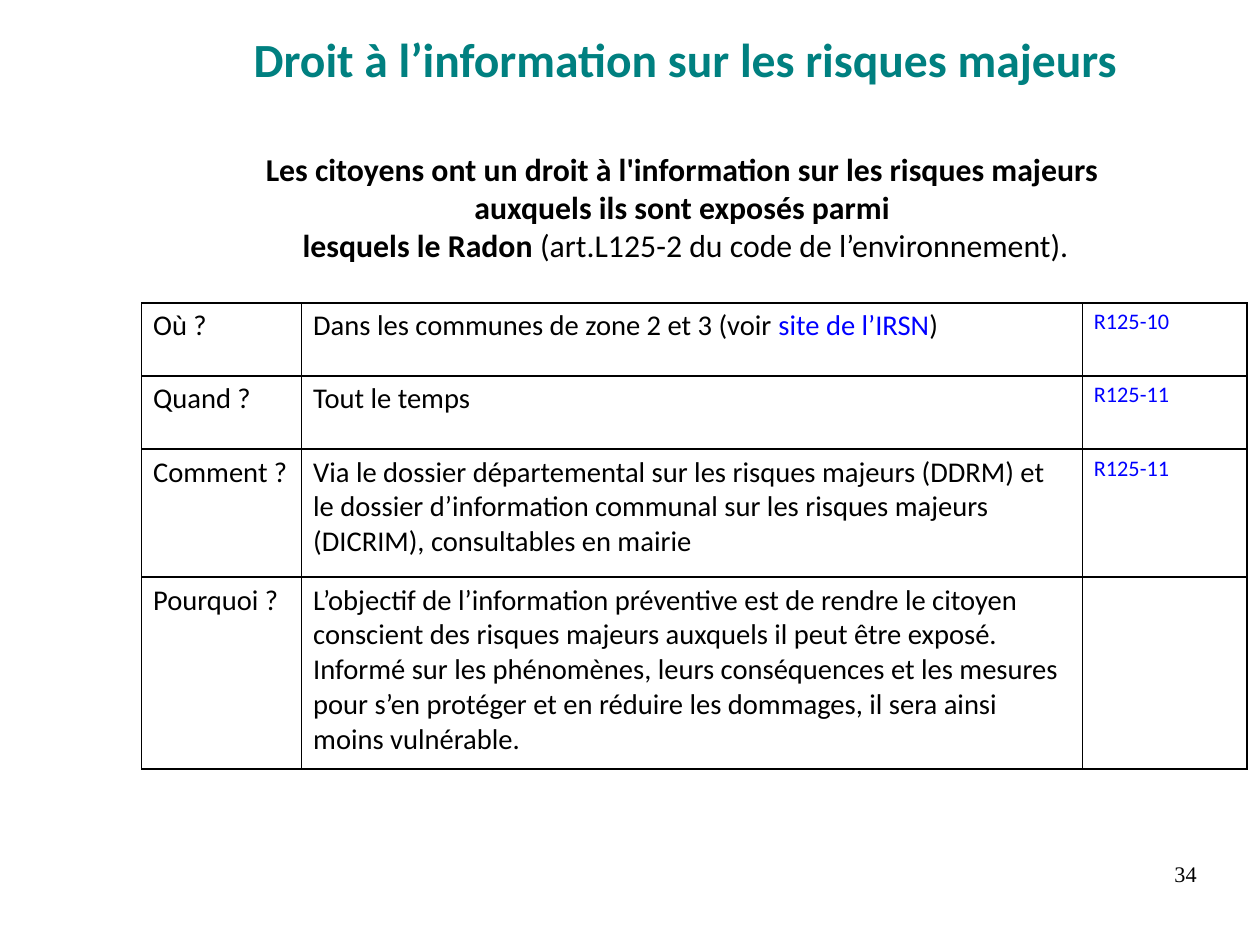
import pptx
import pptx.util
import pptx.dml.color
import pptx.enum.text
from lxml import etree
from pptx.oxml.ns import qn

Inches = pptx.util.Inches
Pt = pptx.util.Pt
RGBColor = pptx.dml.color.RGBColor
Align = pptx.enum.text.PP_ALIGN
Anchor = pptx.enum.text.MSO_ANCHOR

BLACK = RGBColor(0x00, 0x00, 0x00)
TEAL = RGBColor(0x00, 0x80, 0x80)
BLUE = RGBColor(0x00, 0x00, 0xFF)

# Content: a paragraph is a list of runs (text, size, colour, bold)
TITLE = [[("Droit à l’information sur les risques majeurs", 30, TEAL, True)]]
INTRO = [
    [("Les citoyens ont un droit à l'information sur les risques majeurs ", 20, BLACK, True)],
    [("auxquels ils sont exposés parmi ", 20, BLACK, True)],
    [("lesquels le Radon ", 20, BLACK, True),
     ("(art.L125-2 du code de l’environnement).", 20, BLACK, False)],
]
PAGE_NUMBER = [[("34", 14, BLACK, False)]]

# Question, answer as (text, colour) parts, article, row height
QUESTIONS = [
    ("Où ?",
     [("Dans les communes de zone 2 et 3 (voir ", BLACK), ("site de l’IRSN", BLUE), (")", BLACK)],
     "R125-10", 0.64),
    ("Quand ?", [("Tout le temps", BLACK)], "R125-11", 0.64),
    ("Comment ?",
     [("Via le dossier départemental sur les risques majeurs (DDRM) et le dossier "
       "d’information communal sur les risques majeurs (DICRIM), consultables en mairie", BLACK)],
     "R125-11", 1.12),
    ("Pourquoi ?",
     [("L’objectif de l’information préventive est de rendre le citoyen conscient des risques "
       "majeurs auxquels il peut être exposé. Informé sur les phénomènes, leurs conséquences et "
       "les mesures pour s’en protéger et en réduire les dommages, il sera ainsi moins "
       "vulnérable.", BLACK)],
     "", 1.68),
]
COLUMN_WIDTHS = [1.4, 6.83, 1.44]


def write(frame, paragraphs, align=Align.LEFT, font="Calibri"):
    for index, runs in enumerate(paragraphs):
        para = frame.paragraphs[0] if index == 0 else frame.add_paragraph()
        para.alignment = align
        for text, size, colour, bold in runs:
            span = para.add_run()
            span.text = text
            span.font.name = font
            span.font.size = Pt(size)
            span.font.bold = bold
            span.font.color.rgb = colour


def add_text(page, place, paragraphs, align, font="Calibri", margins=(0, 0),
             anchor=Anchor.TOP, wrap=True):
    box = page.shapes.add_textbox(*[Inches(length) for length in place])
    frame = box.text_frame
    frame.word_wrap = wrap
    frame.vertical_anchor = anchor
    frame.margin_left = frame.margin_right = Inches(margins[0])
    frame.margin_top = frame.margin_bottom = Inches(margins[1])
    write(frame, paragraphs, align, font)


def add_borders(cell):
    properties = cell._tc.get_or_add_tcPr()
    for position, side in enumerate(("lnL", "lnR", "lnT", "lnB")):
        line = etree.Element(qn("a:" + side), w=str(Pt(1)))
        fill = etree.SubElement(line, qn("a:solidFill"))
        etree.SubElement(fill, qn("a:srgbClr"), val=str(BLACK))
        properties.insert(position, line)


def add_question_table(page):
    heights = [row[-1] for row in QUESTIONS]
    table = page.shapes.add_table(
        len(heights), len(COLUMN_WIDTHS), Inches(1.24), Inches(2.65),
        Inches(sum(COLUMN_WIDTHS)), Inches(sum(heights))).table
    table.first_row = table.horz_banding = False
    for column, width in zip(table.columns, COLUMN_WIDTHS):
        column.width = Inches(width)
    for row, (question, answer, article, height) in zip(table.rows, QUESTIONS):
        row.height = Inches(height)
        contents = [
            [(question, 18, BLACK, False)],
            [(text, 18, colour, False) for text, colour in answer],
            [(article, 14, BLUE, False)] if article else [],
        ]
        for cell, runs in zip(row.cells, contents):
            cell.fill.background()
            add_borders(cell)
            write(cell.text_frame, [runs])


def main():
    deck = pptx.Presentation()
    # The page is 28 by 21 cm, about 11.02 by 8.27 inches
    deck.slide_width, deck.slide_height = pptx.util.Cm(28), pptx.util.Cm(21)
    page = deck.slides.add_slide(deck.slide_layouts[6])

    # Page number and title
    add_text(page, (7.9, 7.53, 2.57, 0.57), PAGE_NUMBER, Align.RIGHT, "Times New Roman")
    add_text(page, (1.18, -0.18, 9.64, 1.38), TITLE, Align.CENTER, anchor=Anchor.MIDDLE)

    # Questions and introduction
    add_question_table(page)
    add_text(page, (1.18, 1.26, 9.64, 1.11), INTRO, Align.CENTER,
             margins=(0.1, 0.05), wrap=False)

    deck.save("out.pptx")


if __name__ == "__main__":
    main()
